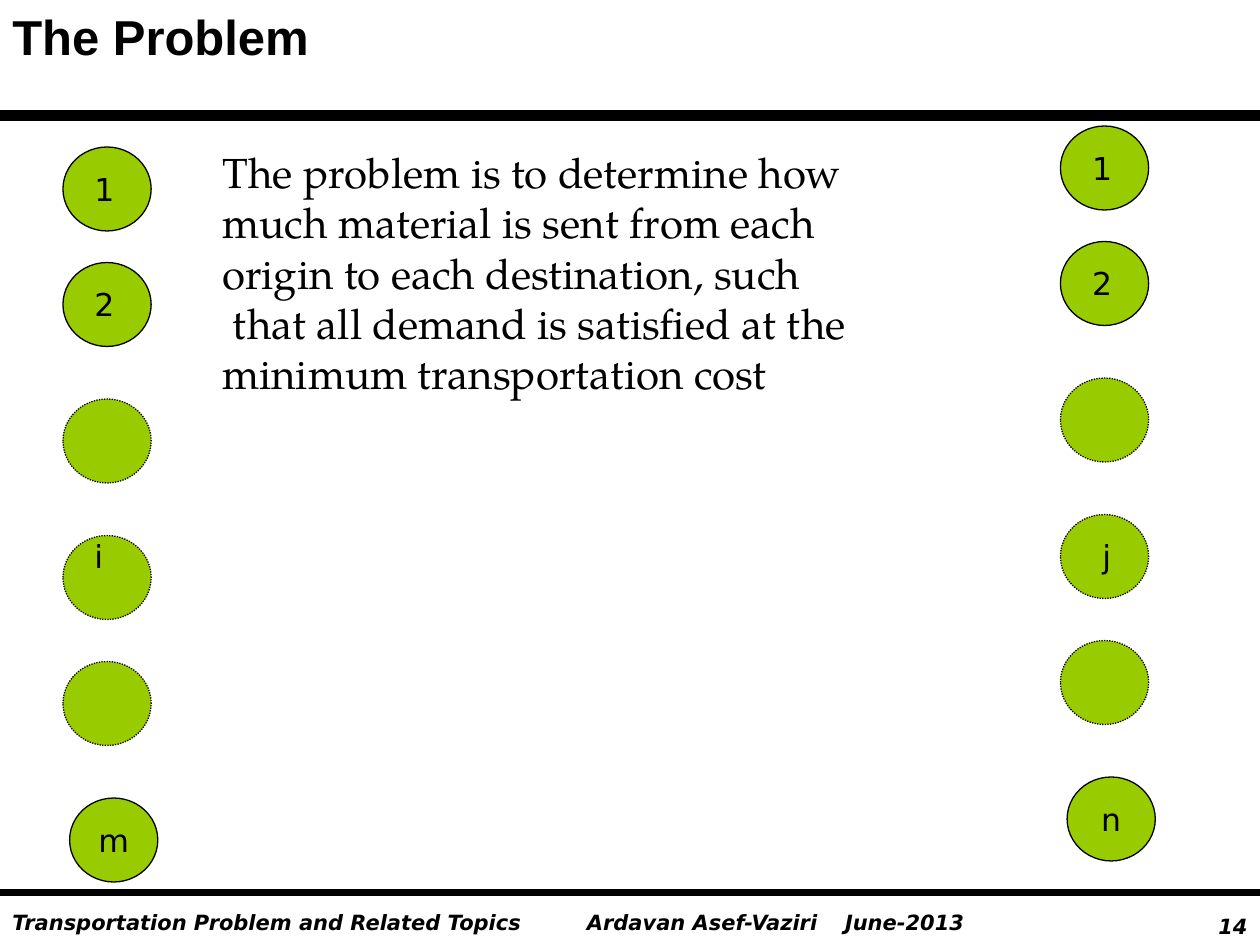
"""Build the transportation problem slide with its origin and destination nodes."""
from dataclasses import dataclass

import pptx
import pptx.dml.color
import pptx.enum.dml
import pptx.enum.shapes
import pptx.enum.text
import pptx.oxml
import pptx.oxml.ns
import pptx.util

Pt = pptx.util.Pt
ALIGN = pptx.enum.text.PP_ALIGN


@dataclass(frozen=True)
class Theme:
    ink: str = "000000"
    node: str = "99CC00"
    heading: tuple = ("Arial", 28, True, False)
    body: tuple = ("TeX Gyre Pagella", 24, False, False)
    label: tuple = ("DejaVu Sans", 18, False, False)
    footer: tuple = ("DejaVu Sans", 12, True, True)


THEME = Theme()
WIDTH, HEIGHT = 720, 540
TITLE = "The Problem"
STATEMENT = [
    ("The problem is to determine how", 0),
    ("much material is sent from each", 0),
    ("origin to each destination, such", 0),
    ("that all demand is satisfied at the", 6),
    ("minimum transportation cost", 0),
]
FOOTERS = [
    ("14", (666, 518.4, 54, 21.6), ALIGN.RIGHT),
    ("Ardavan Asef-Vaziri\tJune-2013", (328.3, 516.2, 241.2, 21.6), ALIGN.LEFT),
    ("Transportation Problem and Related Topics", (0, 516.2, 336.2, 21.6), ALIGN.LEFT),
]
DATE_TAB = 147.5
RULES = [(66, 6), (510, 4.5)]
NODE_WIDTH, NODE_HEIGHT = 50.4, 48
NODE_OFFSETS = [0, 66, 144, 222, 294, 372]
DOTTED = {2, 3, 4}
LAST_SHIFT = 3.8
COLUMNS = [
    {"left": 36, "top": 84, "last": "m",
     "labels": [("1", 46.8, 93.6, 26.6), ("2", 46.8, 159.3, 26.6), ("i", 46.8, 303.1, 20.9)]},
    {"left": 606, "top": 72, "last": "n",
     "labels": [("1", 617, 81.4, 26.6), ("2", 617, 147.6, 26.6), ("j", 622.8, 303.1, 20.9)]},
]


def color(value):
    return pptx.dml.color.RGBColor.from_string(value)


def write(paragraph, text, style, alignment=ALIGN.LEFT):
    paragraph.alignment = alignment
    run = paragraph.add_run()
    run.text = text
    font = run.font
    font.name, size, font.bold, font.italic = style
    font.size = Pt(size)
    font.color.rgb = color(THEME.ink)


def add_text(slide, box, lines, style, alignment=ALIGN.LEFT, wrap=True):
    shape = slide.shapes.add_textbox(*map(Pt, box))
    frame = shape.text_frame
    frame.word_wrap = wrap
    frame.auto_size = pptx.enum.text.MSO_AUTO_SIZE.SHAPE_TO_FIT_TEXT
    for index, (text, indent) in enumerate(lines):
        paragraph = frame.add_paragraph() if index else frame.paragraphs[0]
        properties = paragraph._p.get_or_add_pPr()
        if indent:
            properties.set("marL", str(Pt(indent)))
        if "\t" in text:
            namespace = pptx.oxml.ns.nsdecls("a")
            properties.append(pptx.oxml.parse_xml(
                f'<a:tabLst {namespace}><a:tab pos="{Pt(DATE_TAB)}" algn="l"/></a:tabLst>'))
        write(paragraph, text, style, alignment)


def add_rule(slide, top, weight):
    connector = slide.shapes.add_connector(
        pptx.enum.shapes.MSO_CONNECTOR.STRAIGHT, Pt(0), Pt(top), Pt(WIDTH), Pt(top))
    connector.line.color.rgb = color(THEME.ink)
    connector.line.width = Pt(weight)
    connector._element.spPr.append(
        pptx.oxml.parse_xml(f'<a:effectLst {pptx.oxml.ns.nsdecls("a")}/>'))


def add_node(slide, left, top, dotted, label):
    shape = slide.shapes.add_shape(
        pptx.enum.shapes.MSO_SHAPE.OVAL, Pt(left), Pt(top), Pt(NODE_WIDTH), Pt(NODE_HEIGHT))
    shape.shadow.inherit = False
    shape.fill.solid()
    shape.fill.fore_color.rgb = color(THEME.node)
    shape.line.color.rgb = color(THEME.ink)
    shape.line.width = Pt(0.75)
    if dotted:
        shape.line.dash_style = pptx.enum.dml.MSO_LINE.ROUND_DOT
    if label:
        frame = shape.text_frame
        frame.word_wrap = False
        frame.vertical_anchor = pptx.enum.text.MSO_ANCHOR.MIDDLE
        write(frame.paragraphs[0], label, THEME.label, ALIGN.CENTER)


def add_column(slide, column):
    final = len(NODE_OFFSETS) - 1
    for index, offset in enumerate(NODE_OFFSETS):
        is_last = index == final
        add_node(slide, column["left"] + LAST_SHIFT * is_last, column["top"] + offset,
                 index in DOTTED, column["last"] if is_last else "")
    for text, left, top, width in column["labels"]:
        add_text(slide, (left, top, width, 36), [(text, 0)], THEME.label, wrap=False)


def main():
    presentation = pptx.Presentation()
    presentation.slide_width, presentation.slide_height = Pt(WIDTH), Pt(HEIGHT)
    slide = presentation.slides.add_slide(presentation.slide_layouts[6])
    for text, box, alignment in FOOTERS:
        add_text(slide, box, [(text, 0)], THEME.footer, alignment)
    for top, weight in RULES:
        add_rule(slide, top, weight)
    add_text(slide, (0, 0, WIDTH, 41), [(TITLE, 0)], THEME.heading)
    for column in COLUMNS:
        add_column(slide, column)
    add_text(slide, (120, 80, 381, 152.6), STATEMENT, THEME.body, wrap=False)
    presentation.save("out.pptx")


if __name__ == "__main__":
    main()
